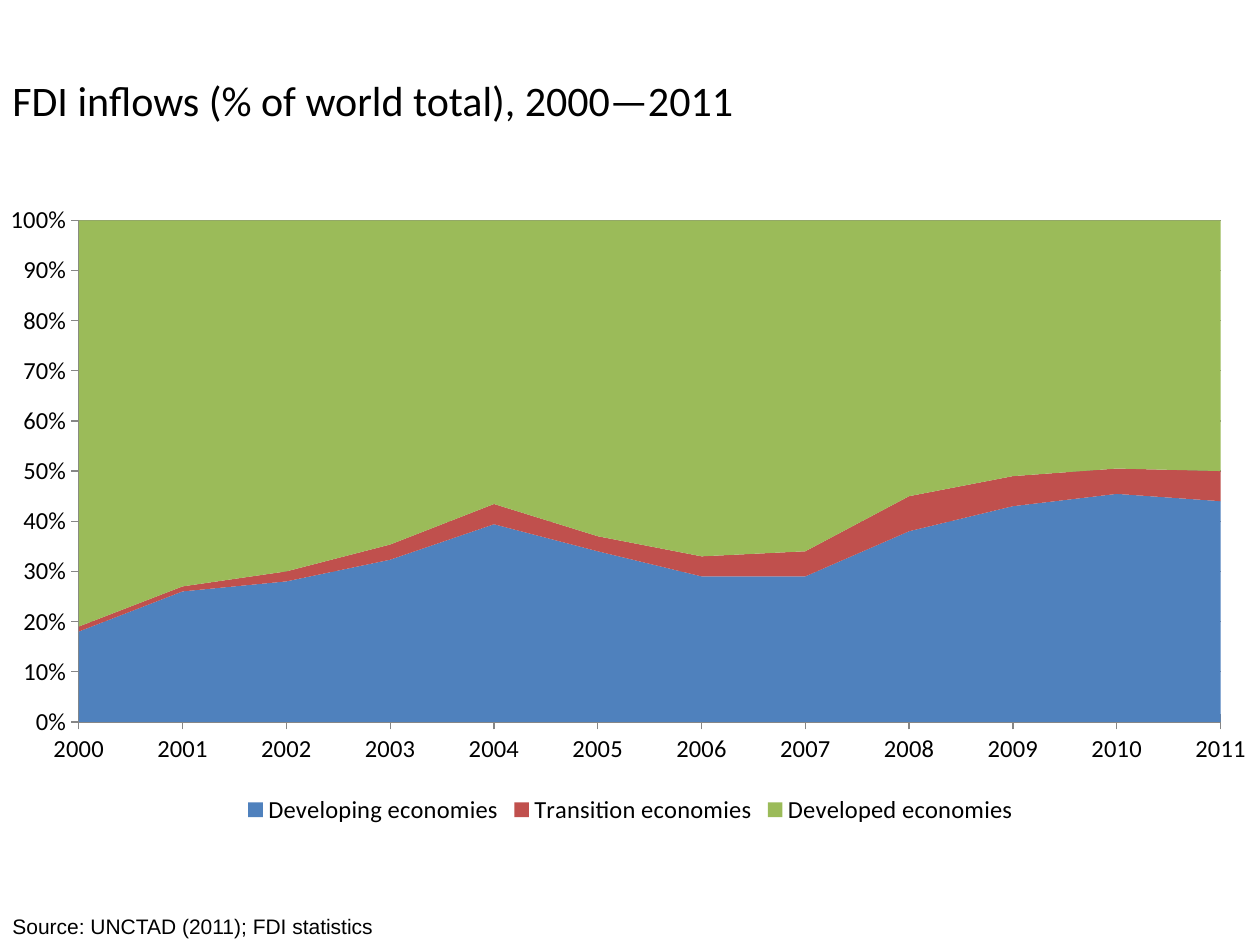
from lxml.etree import SubElement
from pptx import Presentation
from pptx.chart.data import CategoryChartData
from pptx.dml.color import RGBColor
from pptx.enum.chart import XL_CHART_TYPE as ChartType
from pptx.enum.chart import XL_LEGEND_POSITION as LegendPosition
from pptx.enum.chart import XL_TICK_MARK as TickMark
from pptx.enum.text import MSO_ANCHOR as Anchor
from pptx.oxml.ns import qn
from pptx.util import Pt

EMU_PER_PX = 914400 / 126
BLACK = "000000"
AXIS_GREY = "868686"
YEARS = [str(year) for year in range(2000, 2012)]
SHARES = [
    ("Developing economies", "4F81BD", [18, 26, 28, 32, 39, 34, 29, 29, 38, 43, 45, 44]),
    ("Transition economies", "C0504D", [1, 1, 2, 3, 4, 3, 4, 5, 7, 6, 5, 6]),
    ("Developed economies", "9BBB59", [81, 73, 70, 64, 56, 63, 67, 66, 55, 51, 49, 50]),
]


def px(length):
    return round(length * EMU_PER_PX)


def color(value):
    return RGBColor.from_string(value)


def style_font(font, size, name="Calibri"):
    font.size = Pt(size)
    font.name = name
    font.color.rgb = color(BLACK)


def add_text(page, text, left, top, width, height, size, name):
    box = page.shapes.add_textbox(px(left), px(top), px(width), px(height))
    frame = box.text_frame
    frame.word_wrap = True
    frame.vertical_anchor = Anchor.MIDDLE
    frame.text = text
    style_font(frame.paragraphs[0].runs[0].font, size, name)


def style_axis(axis):
    style_font(axis.tick_labels.font, 14)
    axis.major_tick_mark = TickMark.CROSS
    axis.minor_tick_mark = TickMark.NONE
    axis.format.line.color.rgb = color(AXIS_GREY)


def place_plot(chart, x, y, width, height):
    plot_area = chart.plots[0]._element.getparent()
    layout = plot_area.find(qn("c:layout"))
    if layout is None:
        layout = SubElement(plot_area, qn("c:layout"))
        plot_area.insert(0, layout)
    manual = SubElement(layout, qn("c:manualLayout"))
    settings = [
        ("layoutTarget", "inner"), ("xMode", "edge"), ("yMode", "edge"),
        ("x", x), ("y", y), ("w", width), ("h", height),
    ]
    for tag, value in settings:
        SubElement(manual, qn(f"c:{tag}")).set("val", str(value))


def add_share_chart(page, left, top, width, height):
    chart_data = CategoryChartData()
    chart_data.categories = YEARS
    for name, fill, values in SHARES:
        chart_data.add_series(name, values)
    chart = page.shapes.add_chart(
        ChartType.AREA_STACKED_100, px(left), px(top), px(width), px(height), chart_data
    ).chart
    style_font(chart.font, 10)
    chart.has_title = False
    chart.plots[0].vary_by_categories = False
    for series, (name, fill, values) in zip(chart.plots[0].series, SHARES):
        series.format.fill.solid()
        series.format.fill.fore_color.rgb = color(fill)

    style_axis(chart.category_axis)
    share_axis = chart.value_axis
    style_axis(share_axis)
    share_axis.minimum_scale = 0
    share_axis.maximum_scale = 1
    share_axis.major_unit = 0.1
    share_axis.has_major_gridlines = True
    share_axis.major_gridlines.format.line.color.rgb = color(AXIS_GREY)
    share_axis.tick_labels.number_format = "0%"
    share_axis.tick_labels.number_format_is_linked = False
    share_axis._element.find(qn("c:crossBetween")).set("val", "midCat")

    chart.has_legend = True
    chart.legend.position = LegendPosition.BOTTOM
    chart.legend.include_in_layout = False
    style_font(chart.legend.font, 14)
    place_plot(chart, 0.07, 0.04, 0.89, 0.79)


def main():
    deck = Presentation()
    deck.slide_width = px(1260)
    deck.slide_height = px(945)
    page = deck.slides.add_slide(deck.slide_layouts[6])
    add_text(page, "FDI inflows (% of world total), 2000—2011", 0, 65, 1191, 70, 24, "Calibri")
    add_text(page, "Source: UNCTAD (2011); FDI statistics", 0, 907, 446, 38, 12, "Arial")
    add_share_chart(page, -11, 195, 1283, 635)
    deck.save("out.pptx")


if __name__ == "__main__":
    main()
